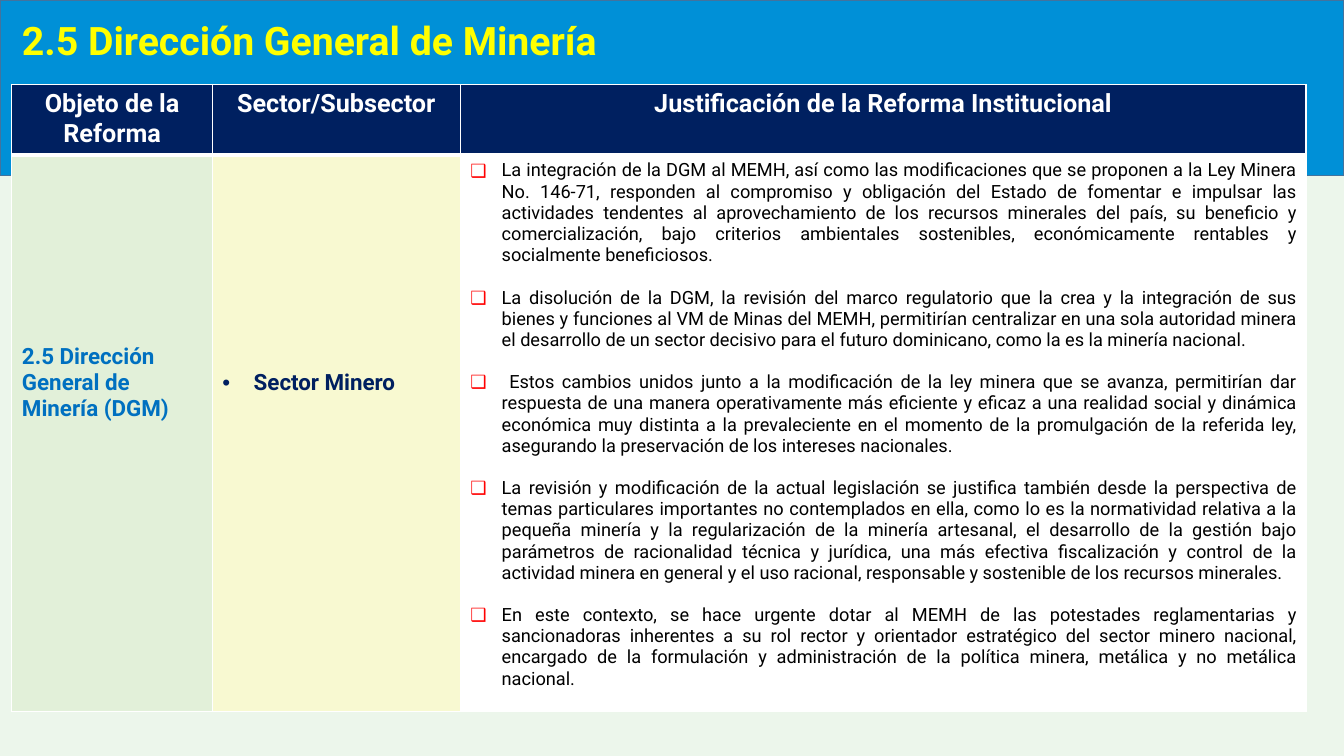
from lxml import etree
from pptx import Presentation
from pptx.dml.color import RGBColor
from pptx.enum import shapes, text
from pptx.oxml import ns
from pptx.util import Cm, Pt

WHITE = RGBColor(0xFF, 0xFF, 0xFF)
BLACK = RGBColor(0, 0, 0)
RED = RGBColor(0xFF, 0, 0)
YELLOW = RGBColor(0xFF, 0xFF, 0)
NAVY = RGBColor(0x00, 0x20, 0x60)
BLUE = RGBColor(0x00, 0x70, 0xC0)
SKY = RGBColor(0x00, 0x90, 0xD7)
EDGE = RGBColor(0x43, 0x73, 0x9E)
MINT = RGBColor(0xEC, 0xF6, 0xEB)
GREEN = RGBColor(0xE2, 0xF0, 0xD9)
CREAM = RGBColor(0xF8, 0xF9, 0xD1)

LEFT, CENTER, FULL = text.PP_ALIGN.LEFT, text.PP_ALIGN.CENTER, text.PP_ALIGN.JUSTIFY
INDENT = Cm(0.79)
HEADS = ["Objeto de la Reforma", "Sector/Subsector",
         "Justificación de la Reforma Institucional"]
REASONS = [
    "La integración de la DGM al MEMH, así como las modificaciones que se proponen a la Ley "
    "Minera No. 146-71, responden al compromiso y obligación del Estado de fomentar e impulsar "
    "las actividades tendentes al aprovechamiento de los recursos minerales del país, su "
    "beneficio y comercialización, bajo criterios ambientales sostenibles, económicamente "
    "rentables y socialmente beneficiosos.",
    "La disolución de la DGM, la revisión del marco regulatorio que la crea y la integración de "
    "sus bienes y funciones al VM de Minas del MEMH, permitirían centralizar en una sola "
    "autoridad minera el desarrollo de un sector decisivo para el futuro dominicano, como la es "
    "la minería nacional.",
    " Estos cambios unidos junto a la modificación de la ley minera que se avanza, permitirían "
    "dar respuesta de una manera operativamente más eficiente y eficaz a una realidad social y "
    "dinámica económica muy distinta a la prevaleciente en el momento de la promulgación de la "
    "referida ley, asegurando la preservación de los intereses nacionales.",
    "La revisión y modificación de la actual legislación se justifica también desde la "
    "perspectiva de temas particulares importantes no contemplados en ella, como lo es la "
    "normatividad relativa a la pequeña minería y la regularización de la minería artesanal, el "
    "desarrollo de la gestión bajo parámetros de racionalidad técnica y jurídica, una más "
    "efectiva fiscalización y control de la actividad minera en general y el uso racional, "
    "responsable y sostenible de los recursos minerales.",
    "En este contexto, se hace urgente dotar al MEMH de las potestades reglamentarias y "
    "sancionadoras inherentes a su rol rector y orientador estratégico del sector minero "
    "nacional, encargado de la formulación y administración de la política minera, metálica y "
    "no metálica nacional.",
]


def style(par, words, size, color, bold=True, align=LEFT):
    par.alignment = align
    run = par.add_run()
    run.text = words
    look = {"name": "Roboto", "size": Pt(size), "bold": bold}
    for key, val in look.items():
        setattr(run.font, key, val)
    run.font.color.rgb = color


def bullet(par, mark, color):
    props = par._p.get_or_add_pPr()
    props.set("marL", str(INDENT))
    props.set("indent", str(-INDENT))
    tint = etree.SubElement(props, ns.qn("a:buClr"))
    etree.SubElement(tint, ns.qn("a:srgbClr"), val=str(color))
    etree.SubElement(props, ns.qn("a:buFont"), typeface="Arial")
    etree.SubElement(props, ns.qn("a:buChar"), char=mark)


def border(cell, sides):
    props = cell._tc.get_or_add_tcPr()
    for side, width in sides.items():
        line = etree.SubElement(props, ns.qn("a:ln" + side), w=str(Pt(width)))
        fill = etree.SubElement(line, ns.qn("a:solidFill"))
        etree.SubElement(fill, ns.qn("a:srgbClr"), val=str(WHITE))


def paint(cell, color, top=1, base=1):
    border(cell, {"L": 1, "R": 1, "T": top, "B": base})
    cell.fill.solid()
    cell.fill.fore_color.rgb = color


def band(slide, width):
    box = slide.shapes.add_shape(shapes.MSO_SHAPE.RECTANGLE, 0, 0, width, Cm(4.42))
    box.shadow.inherit = False
    box.fill.solid()
    box.fill.fore_color.rgb = SKY
    box.line.color.rgb = EDGE
    box.line.width = Pt(1)
    slide.shapes.element.insert(2, box.element)  # behind the title


def title(slide, words):
    head = slide.shapes.title
    place = {"left": Cm(0.3), "top": Cm(0.2), "width": Cm(30.56), "height": Cm(2.64)}
    for key, val in place.items():
        setattr(head, key, val)
    frame = head.text_frame
    look = {"word_wrap": True, "auto_size": text.MSO_AUTO_SIZE.NONE,
            "vertical_anchor": text.MSO_ANCHOR.TOP, "margin_top": Cm(0.22)}
    for key, val in look.items():
        setattr(frame, key, val)
    style(frame.paragraphs[0], words, 28, YELLOW)


def grid(slide, widths, heights):
    frame = slide.shapes.add_table(len(heights), len(widths), Cm(0.3), Cm(2.13),
                                   Cm(sum(widths)), Cm(sum(heights)))
    table = frame.table
    table.first_row = table.horz_banding = False
    for col, width in zip(table.columns, widths):
        col.width = Cm(width)
    for row, height in zip(table.rows, heights):
        row.height = Cm(height)
    return table


def reasons(cell):
    frame = cell.text_frame
    for num, words in enumerate(REASONS):
        par = frame.add_paragraph() if num else frame.paragraphs[0]
        bullet(par, "❑", RED)
        if num:
            par.space_before = Pt(15.2)
        style(par, words, 13, BLACK, False, FULL)


def main():
    deck = Presentation()
    deck.slide_width, deck.slide_height = Cm(33.87), Cm(19.05)
    slide = deck.slides.add_slide(deck.slide_layouts[5])
    slide.background.fill.solid()
    slide.background.fill.fore_color.rgb = MINT

    # Heading
    band(slide, deck.slide_width)
    title(slide, "2.5 Dirección General de Minería")

    # Table header
    table = grid(slide, [5.05, 6.25, 21.31], [1.78, 14.02])
    for col, words in enumerate(HEADS):
        cell = table.cell(0, col)
        paint(cell, NAVY, base=3)
        style(cell.text_frame.paragraphs[0], words, 18, WHITE, align=CENTER)

    # Table body
    body, sector, why = table.rows[1].cells
    for cell, color in zip((body, sector, why), (GREEN, CREAM, WHITE)):
        paint(cell, color, top=3)
    body.margin_top = Cm(4.75)
    style(body.text_frame.paragraphs[0], "2.5 Dirección General de Minería (DGM)", 16, BLUE)
    sector.margin_top = Cm(5.41)
    par = sector.text_frame.paragraphs[0]
    bullet(par, "•", NAVY)
    style(par, "Sector Minero", 16, NAVY)
    reasons(why)

    deck.save("out.pptx")


if __name__ == "__main__":
    main()
